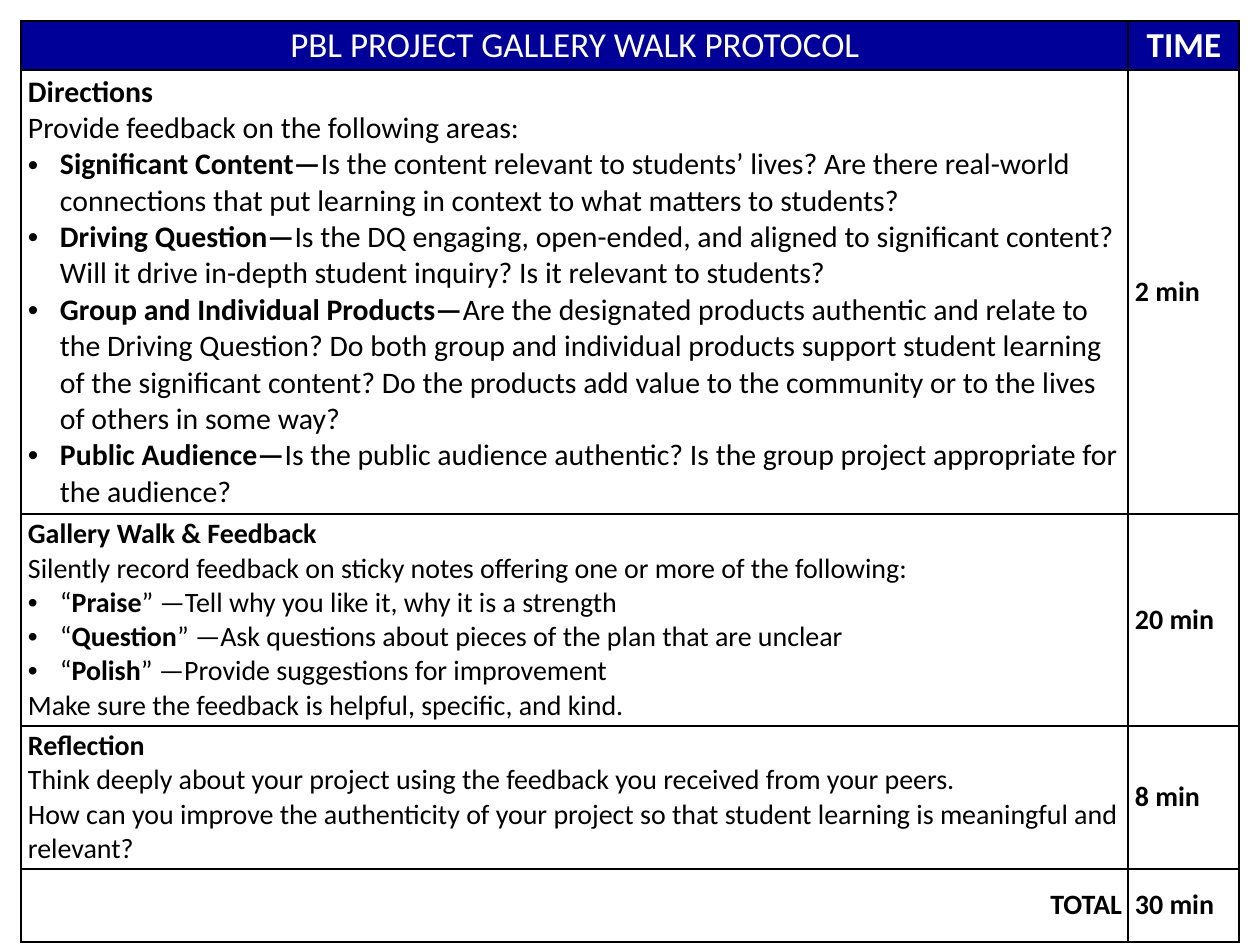
from dataclasses import dataclass

from lxml import etree
from pptx import Presentation
from pptx.dml.color import RGBColor
from pptx.enum.text import MSO_ANCHOR, PP_ALIGN
from pptx.oxml.ns import qn
from pptx.util import Emu, Pt

LEFT, CENTER, RIGHT = PP_ALIGN.LEFT, PP_ALIGN.CENTER, PP_ALIGN.RIGHT
TOP, MIDDLE = MSO_ANCHOR.TOP, MSO_ANCHOR.MIDDLE
BULLET = "• "
EMU_PER_PX = 914400 / 126


def px(n):
    return Emu(round(n * EMU_PER_PX))


@dataclass(frozen=True)
class Theme:
    font: str = "Calibri"
    navy: str = "000099"
    white: str = "FFFFFF"
    black: str = "000000"
    header_size: int = 20
    large_size: int = 17
    body_size: int = 16
    border: int = 1
    pad_left: int = 7
    pad_right: int = 6
    pad_y: int = 3
    indent: int = 32


class Deck:
    def __init__(self, theme, width, height):
        self.theme = theme
        self.prs = Presentation()
        self.prs.slide_width, self.prs.slide_height = px(width), px(height)
        self.s = self.prs.slides.add_slide(self.prs.slide_layouts[6])

    def table(self, x, y, cols, rows):
        frame = self.s.shapes.add_table(
            len(rows), len(cols), px(x), px(y), px(sum(cols)), px(sum(rows)))
        table = frame.table
        for column, width in zip(table.columns, cols):
            column.width = px(width)
        for row, height in zip(table.rows, rows):
            row.height = px(height)
        return table

    def cell(self, cell, lines, size, fill, color, align=LEFT, anchor=MIDDLE):
        """Fill a cell; ** switches bold and a leading bullet makes a list item."""
        t = self.theme
        fmt = {"margin_left": px(t.pad_left), "margin_right": px(t.pad_right),
               "margin_top": px(t.pad_y), "margin_bottom": px(t.pad_y),
               "vertical_anchor": anchor}
        for name, value in fmt.items():
            setattr(cell, name, value)
        cell.fill.solid()
        cell.fill.fore_color.rgb = RGBColor.from_string(fill)
        self.borders(cell)
        tf = cell.text_frame
        for i, line in enumerate(lines):
            p = tf.add_paragraph() if i else tf.paragraphs[0]
            p.alignment = align
            if line.startswith(BULLET):
                self.bullet(p)
            self.runs(p, line.removeprefix(BULLET), size, color)

    def runs(self, p, line, size, color):
        for i, part in enumerate(line.split("**")):
            if not part:
                continue
            r = p.add_run()
            r.text = part
            fmt = {"name": self.theme.font, "size": Pt(size), "bold": i % 2 == 1}
            for name, value in fmt.items():
                setattr(r.font, name, value)
            r.font.color.rgb = RGBColor.from_string(color)

    def bullet(self, p):
        pPr = p._p.get_or_add_pPr()
        indent = px(self.theme.indent)
        pPr.set("marL", str(indent))
        pPr.set("indent", str(-indent))
        etree.SubElement(pPr, qn("a:buFont"), typeface="Arial")
        etree.SubElement(pPr, qn("a:buChar"), char=BULLET.strip())

    def borders(self, cell):
        tcPr = cell._tc.get_or_add_tcPr()
        for i, side in enumerate("LRTB"):
            ln = etree.Element(qn(f"a:ln{side}"), w=str(Pt(self.theme.border)))
            fill = etree.SubElement(ln, qn("a:solidFill"))
            etree.SubElement(fill, qn("a:srgbClr"), val=self.theme.black)
            tcPr.insert(i, ln)

    def save(self):
        self.prs.save("out.pptx")


DIRECTIONS = [
    "**Directions**",
    "Provide feedback on the following areas:",
    "• **Significant Content—**Is the content relevant to students’ lives? Are there "
    "real-world connections that put learning in context to what matters to students?",
    "• **Driving Question—**Is the DQ engaging, open-ended, and aligned to significant "
    "content? Will it drive in-depth student inquiry? Is it relevant to students?",
    "• **Group and Individual Products—**Are the designated products authentic and "
    "relate to the Driving Question? Do both group and individual products support "
    "student learning of the significant content? Do the products add value to the "
    "community or to the lives of others in some way?",
    "• **Public Audience—**Is the public audience authentic? Is the group project "
    "appropriate for the audience?",
]
GALLERY_WALK = [
    "**Gallery Walk & Feedback**",
    "Silently record feedback on sticky notes offering one or more of the following:",
    "• “**Praise**” —Tell why you like it, why it is a strength",
    "• “**Question**” —Ask questions about pieces of the plan that are unclear",
    "• “**Polish**” —Provide suggestions for improvement",
    "Make sure the feedback is helpful, specific, and kind.",
]
REFLECTION = [
    "**Reflection**",
    "Think deeply about your project using the feedback you received from your peers.",
    "How can you improve the authenticity of your project so that student learning is "
    "meaningful and relevant?",
]


def main():
    t = Theme()
    deck = Deck(t, 1260, 945)
    table = deck.table(21, 21, cols=[1107, 111], rows=[49, 444, 212, 143, 73])

    for col, title in enumerate(["PBL PROJECT GALLERY WALK PROTOCOL", "**TIME**"]):
        deck.cell(table.cell(0, col), [title], t.header_size, t.navy, t.white, CENTER, TOP)

    steps = [
        (DIRECTIONS, "2 min", t.large_size, LEFT),
        (GALLERY_WALK, "20 min", t.body_size, LEFT),
        (REFLECTION, "8 min", t.body_size, LEFT),
        (["**TOTAL**"], "30 min", t.body_size, RIGHT),
    ]
    for row, (lines, time, size, align) in enumerate(steps, start=1):
        deck.cell(table.cell(row, 0), lines, size, t.white, t.black, align)
        deck.cell(table.cell(row, 1), [f"**{time}**"], t.body_size, t.white, t.black)

    deck.save()


if __name__ == "__main__":
    main()
